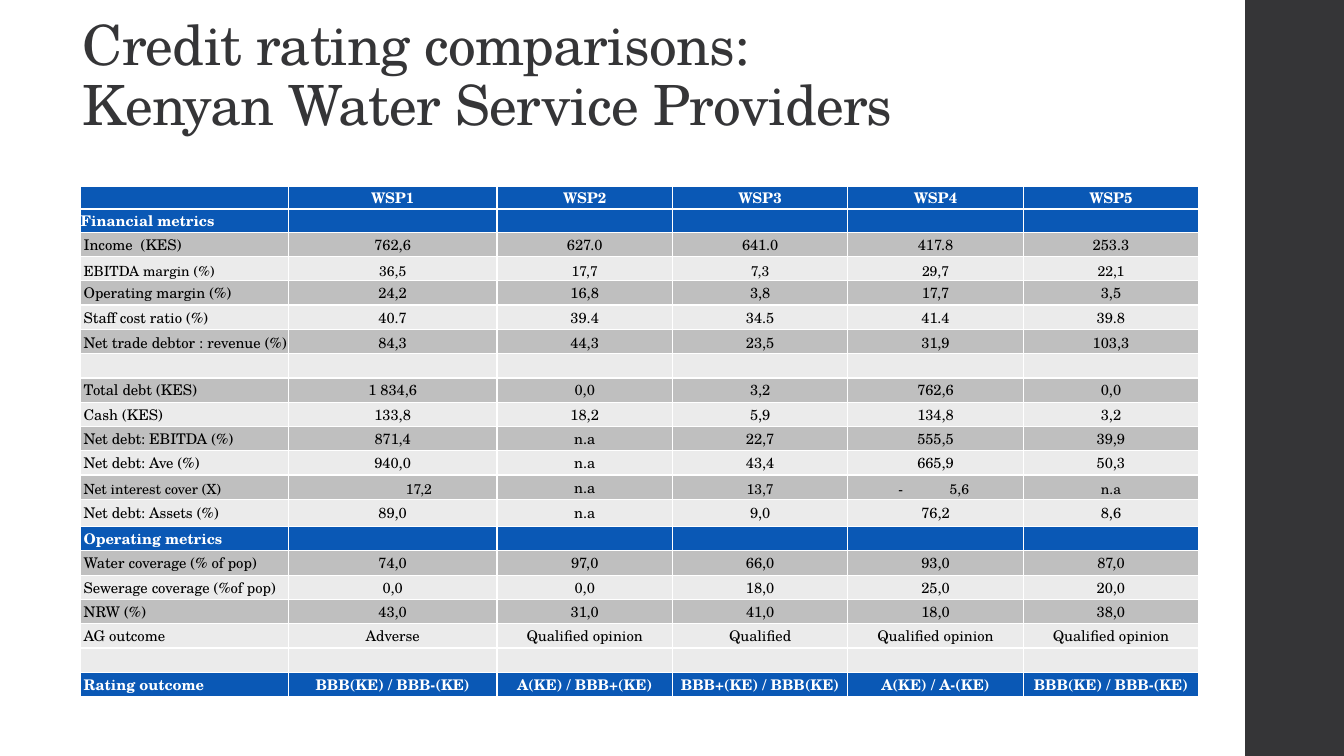
import pptx
import pptx.util
import pptx.dml.color
import pptx.enum.shapes
import pptx.enum.text
import pptx.oxml.xmlchemy

Inches, Pt = pptx.util.Inches, pptx.util.Pt
ALIGN, ANCHOR = pptx.enum.text.PP_ALIGN, pptx.enum.text.MSO_ANCHOR

FONT = "TeX Gyre Schola"
BLUE, GREY, PALE, DARK = "0A58B5", "BFBFBF", "EBEBEB", "353537"
WHITE, BLACK = "FFFFFF", "000000"

TITLE = "Credit rating comparisons: \vKenyan Water Service Providers"
BLANK = ("",) * 6
ROWS = [
    ("", "WSP1", "WSP2", "WSP3", "WSP4", "WSP5"),
    ("Financial metrics", "", "", "", "", ""),
    ("Income  (KES)", "762,6", "627.0", "641.0", "417.8", "253.3"),
    ("EBITDA margin (%)", "36,5", "17,7", "7,3", "29,7", "22,1"),
    ("Operating margin (%)", "24,2", "16,8", "3,8", "17,7", "3,5"),
    ("Staff cost ratio (%)", "40.7", "39.4", "34.5", "41.4", "39.8"),
    ("Net trade debtor : revenue (%)", "84,3", "44,3", "23,5", "31,9", "103,3"),
    BLANK,
    ("Total debt (KES)", "1 834,6", "0,0", "3,2", "762,6", "0,0"),
    ("Cash (KES)", "133,8", "18,2", "5,9", "134,8", "3,2"),
    ("Net debt: EBITDA (%)", "871,4", "n.a", "22,7", "555,5", "39,9"),
    ("Net debt: Ave (%)", "940,0", "n.a", "43,4", "665,9", "50,3"),
    ("Net interest cover (X)", "17,2", "n.a", "13,7", "-\t5,6", "n.a"),
    ("Net debt: Assets (%)", "89,0", "n.a", "9,0", "76,2", "8,6"),
    ("Operating metrics", "", "", "", "", ""),
    ("Water coverage (% of pop)", "74,0", "97,0", "66,0", "93,0", "87,0"),
    ("Sewerage coverage (%of pop)", "0,0", "0,0", "18,0", "25,0", "20,0"),
    ("NRW (%)", "43,0", "31,0", "41,0", "18,0", "38,0"),
    ("AG outcome", "Adverse", "Qualified opinion", "Qualified",
     "Qualified opinion", "Qualified opinion"),
    BLANK,
    ("Rating outcome", "BBB(KE) / BBB-(KE)", "A(KE) / BBB+(KE)",
     "BBB+(KE) / BBB(KE)", "A(KE) / A-(KE)", "BBB(KE) / BBB-(KE)"),
]
BANDS = {0, 1, 14, 20}
BOTTOM_ROWS = {0, 3, 6, 12}
SMALL_ROWS = {3, 12}
MIDDLE_CELLS = {(12, 2)}
INDENTS = {(1, 0): 0, (12, 1): 0.52, (12, 4): 0.5}
TAB_STOP = 0.51
COL_WIDTHS = [2.06, 2.07] + [1.74] * 4
TALL_ROWS = {0: 0.22, 1: 0.23, 13: 0.27}
TABLE_HEIGHT = 5.06
ROW_HEIGHT = (TABLE_HEIGHT - sum(TALL_ROWS.values())) / (len(ROWS) - len(TALL_ROWS))


def rgb(value):
    return pptx.dml.color.RGBColor.from_string(value)


def apply(target, values):
    for name, value in values.items():
        setattr(target, name, value)


def fill(obj, color):
    obj.fill.solid()
    obj.fill.fore_color.rgb = rgb(color)


def add_xml(parent, tag, **attrs):
    child = pptx.oxml.xmlchemy.OxmlElement(tag)
    for name, value in attrs.items():
        child.set(name, str(value))
    parent.append(child)
    return child


def add_borders(cell):
    tcPr = cell._tc.get_or_add_tcPr()
    for side in ("a:lnL", "a:lnR", "a:lnT", "a:lnB"):
        ln = add_xml(tcPr, side, w=Pt(1))
        add_xml(add_xml(ln, "a:solidFill"), "a:srgbClr", val=WHITE)


def write_cell(cell, row, col, text, color):
    add_borders(cell)
    fill(cell, color)
    bottom = row in BOTTOM_ROWS and (row, col) not in MIDDLE_CELLS
    small = row in SMALL_ROWS and (row, col) not in MIDDLE_CELLS
    indent = INDENTS.get((row, col), 0 if col else 0.03)
    apply(cell, {"margin_left": Inches(indent), "margin_right": 0,
                 "margin_top": 0, "margin_bottom": 0,
                 "vertical_anchor": ANCHOR.BOTTOM if bottom else ANCHOR.MIDDLE})
    p = cell.text_frame.paragraphs[0]
    p.alignment = ALIGN.CENTER if col and "\t" not in text else ALIGN.LEFT
    if not text:
        add_xml(p._p, "a:endParaRPr", sz=1050)
        return
    if "\t" in text:
        tabs = add_xml(p._p.get_or_add_pPr(), "a:tabLst")
        add_xml(tabs, "a:tab", pos=Inches(TAB_STOP), algn="l")
    r = p.add_run()
    r.text = text
    apply(r.font, {"name": FONT, "size": Pt(10 if small else 10.5), "bold": row in BANDS})
    r.font.color.rgb = rgb(WHITE if row in BANDS else BLACK)


def add_sidebar(s):
    sp = s.shapes.add_shape(pptx.enum.shapes.MSO_SHAPE.RECTANGLE,
                            Inches(12.35), 0, Inches(1), Inches(7.5))
    sp.shadow.inherit = False
    fill(sp, DARK)
    sp.line.fill.background()


def add_title(s):
    sp = s.shapes.title
    apply(sp, {"left": Inches(0.72), "top": Inches(0.76),
               "width": Inches(11.5), "height": Inches(0.65)})
    tf = sp.text_frame
    tf.text = TITLE
    apply(tf, {"word_wrap": True, "vertical_anchor": ANCHOR.BOTTOM,
               "auto_size": pptx.enum.text.MSO_AUTO_SIZE.NONE})
    p = tf.paragraphs[0]
    apply(p, {"alignment": ALIGN.LEFT, "line_spacing": 0.9})
    for r in p.runs:
        apply(r.font, {"name": FONT, "size": Pt(39.6)})
        r.font.color.rgb = rgb(DARK)
        r.font._element.set("spc", "-50")


def add_ratings(s):
    table = s.shapes.add_table(len(ROWS), len(COL_WIDTHS), Inches(0.8), Inches(1.85),
                               Inches(sum(COL_WIDTHS)), Inches(TABLE_HEIGHT)).table
    apply(table, {"first_row": False, "horz_banding": False})
    for column, width in zip(table.columns, COL_WIDTHS):
        column.width = Inches(width)
    stripe = GREY
    for row, texts in enumerate(ROWS):
        table.rows[row].height = Inches(TALL_ROWS.get(row, ROW_HEIGHT))
        if row in BANDS:
            color, stripe = BLUE, GREY
        else:
            color = PALE if texts == BLANK else stripe
            stripe = PALE if color == GREY else GREY
        for col, text in enumerate(texts):
            write_cell(table.cell(row, col), row, col, text, color)


def main():
    prs = pptx.Presentation()
    apply(prs, {"slide_width": Inches(13.33), "slide_height": Inches(7.5)})
    s = prs.slides.add_slide(prs.slide_layouts[5])
    add_sidebar(s)
    add_title(s)
    add_ratings(s)
    prs.save("out.pptx")


if __name__ == "__main__":
    main()
